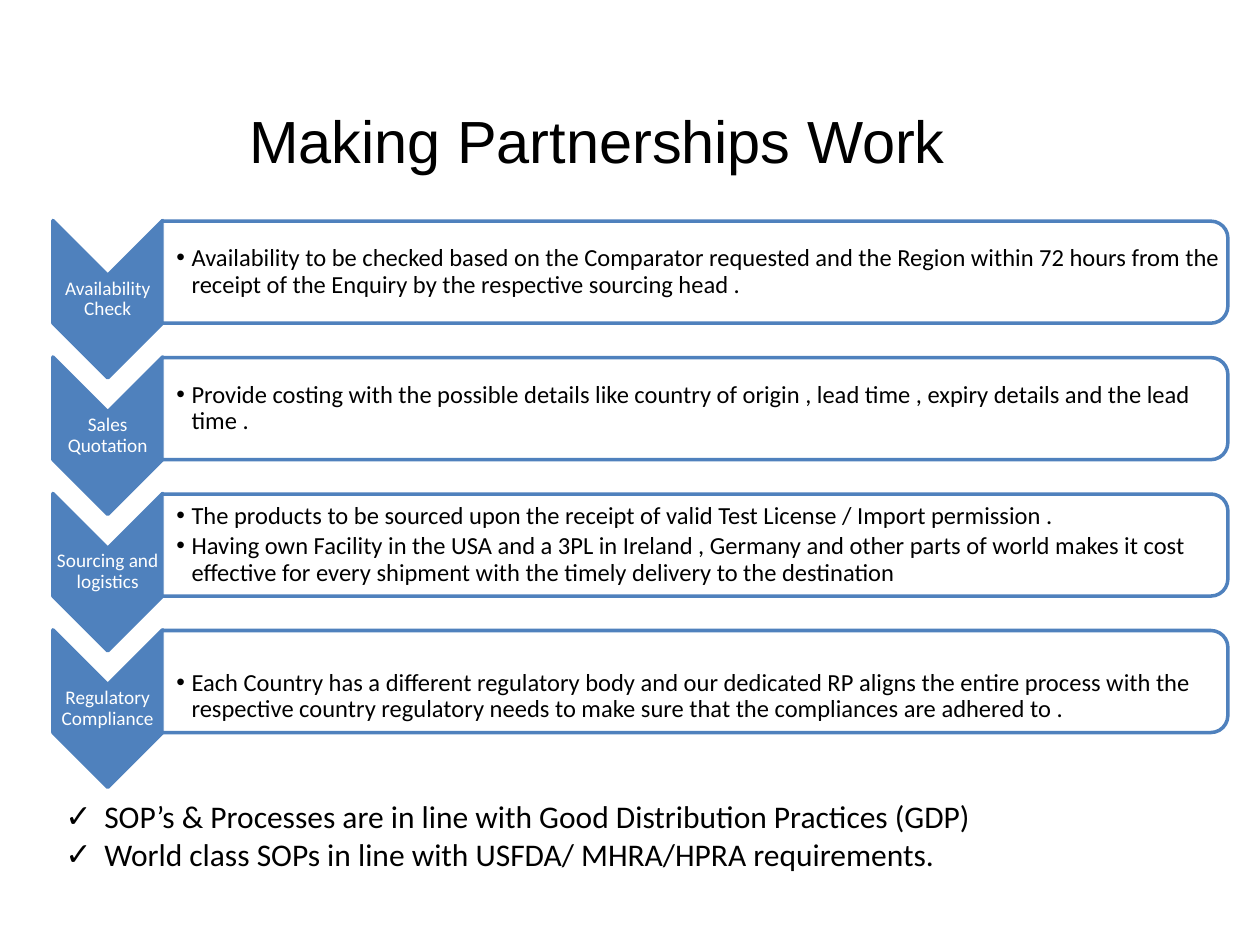
from lxml import etree
from pptx import Presentation
from pptx.dml.color import RGBColor
from pptx.enum.shapes import MSO_SHAPE as Shape
from pptx.enum.text import MSO_ANCHOR as Anchor, PP_ALIGN as Align
from pptx.oxml.ns import qn
from pptx.util import Inches, Pt

BLUE = RGBColor(0x4F, 0x81, 0xBD)
WHITE = RGBColor(0xFF, 0xFF, 0xFF)
BLACK = RGBColor(0x00, 0x00, 0x00)

ROW_PITCH = 1.083
CHEVRON_CENTER = (0.855, 2.375)
BAR_CENTER = (5.515, 2.16)

STEPS = [
    ("Availability Check", [
        "Availability to be checked based on the Comparator requested and the Region "
        "within 72 hours from the receipt of the Enquiry by the respective sourcing head ."]),
    ("Sales Quotation", [
        "Provide costing with the possible details like country of origin , lead time , "
        "expiry details and the lead time ."]),
    ("Sourcing and logistics", [
        "The products to be sourced upon the receipt of valid Test License / Import permission .",
        "Having own Facility in the USA and a 3PL in Ireland , Germany and other parts of world "
        "makes it cost effective for every shipment with the timely delivery to the destination"]),
    ("Regulatory Compliance", [
        "Each Country has a different regulatory body and our dedicated RP aligns the entire "
        "process with the respective country regulatory needs to make sure that the "
        "compliances are adhered to ."]),
]
STANDARDS = [
    "SOP’s & Processes are in line with Good Distribution Practices (GDP)",
    "World class SOPs in line with USFDA/ MHRA/HPRA requirements.",
]

TITLE = {"size": Pt(34), "name": "Arial"}
LABEL = {"size": Pt(11), "name": "Calibri"}
DETAIL = {"size": Pt(14), "name": "Calibri"}
STANDARD = {"size": Pt(18), "name": "Calibri"}
CENTERED = {"alignment": Align.CENTER}
LABEL_LAYOUT = {"alignment": Align.CENTER, "line_spacing": 0.9, "space_after": Pt(4)}
DETAIL_LAYOUT = {"line_spacing": 0.9, "space_after": Pt(2)}

deck = Presentation()
deck.slide_width, deck.slide_height = Inches(10), Inches(7.5)
slide = deck.slides.add_slide(deck.slide_layouts[6])


def add_text(bounds, texts, font, color, layout, insets, anchor=Anchor.TOP,
             bullet=None, indent=0):
    """Add a text box; bounds and insets are inches as left, top, width/right, height/bottom."""
    box = slide.shapes.add_textbox(*map(Inches, bounds))
    frame = box.text_frame
    frame.word_wrap = True
    frame.vertical_anchor = anchor
    for side, inset in zip(("left", "top", "right", "bottom"), insets):
        setattr(frame, f"margin_{side}", Inches(inset))
    for index, text in enumerate(texts):
        para = frame.paragraphs[0] if index == 0 else frame.add_paragraph()
        for name, value in layout.items():
            setattr(para, name, value)
        if bullet:
            props = para._p.get_or_add_pPr()
            props.set("marL", str(Inches(indent)))
            props.set("indent", str(-Inches(indent)))
            etree.SubElement(props, qn("a:buFont")).set("typeface", "Arial")
            etree.SubElement(props, qn("a:buChar")).set("char", bullet)
        span = para.add_run()
        span.text = text
        for name, value in font.items():
            setattr(span.font, name, value)
        span.font.color.rgb = color


def add_turned_shape(kind, center, length, breadth, color):
    """Add a blue-edged shape turned 90 degrees about its center."""
    x, y = center
    shape = slide.shapes.add_shape(kind, Inches(x - length / 2), Inches(y - breadth / 2),
                                   Inches(length), Inches(breadth))
    shape.rotation = 90
    shape.shadow.inherit = False
    shape.fill.solid()
    shape.fill.fore_color.rgb = color
    shape.line.color.rgb = BLUE
    shape.line.width = Pt(2)
    return shape


add_text((0.58, 0.83, 8.32, 0.57), ["Making Partnerships Work"], TITLE, BLACK,
         CENTERED, (0, 0, 0, 0))

for row, (label, details) in enumerate(STEPS):
    offset = row * ROW_PITCH
    chevron_y = CHEVRON_CENTER[1] + offset
    bar_y = BAR_CENTER[1] + offset

    add_turned_shape(Shape.CHEVRON, (CHEVRON_CENTER[0], chevron_y), 1.25, 0.87, BLUE)
    add_text((0.42, chevron_y - 0.185, 0.87, 0.37), [label], LABEL, WHITE,
             LABEL_LAYOUT, (0.01, 0.01, 0.01, 0.01), Anchor.MIDDLE)

    bar = add_turned_shape(Shape.ROUND_2_SAME_RECTANGLE, (BAR_CENTER[0], bar_y),
                           0.81, 8.46, WHITE)
    bar_color = bar._element.spPr.find(qn("a:solidFill"))[0]
    etree.SubElement(bar_color, qn("a:alpha")).set("val", "90000")
    # The last step's text sits one line lower in its bar
    top_inset = 0.25 if row == len(STEPS) - 1 else 0.01
    add_text((1.29, bar_y - 0.365, 8.42, 0.73), details, DETAIL, BLACK, DETAIL_LAYOUT,
             (0.11, top_inset, 0.01, 0.01), Anchor.MIDDLE, "•", 0.12)

add_text((0.42, 6.28, 9.33, 1.01), STANDARDS, STANDARD, BLACK, {},
         (0.1, 0.05, 0.1, 0.05), bullet="✓", indent=0.31)

deck.save("out.pptx")
